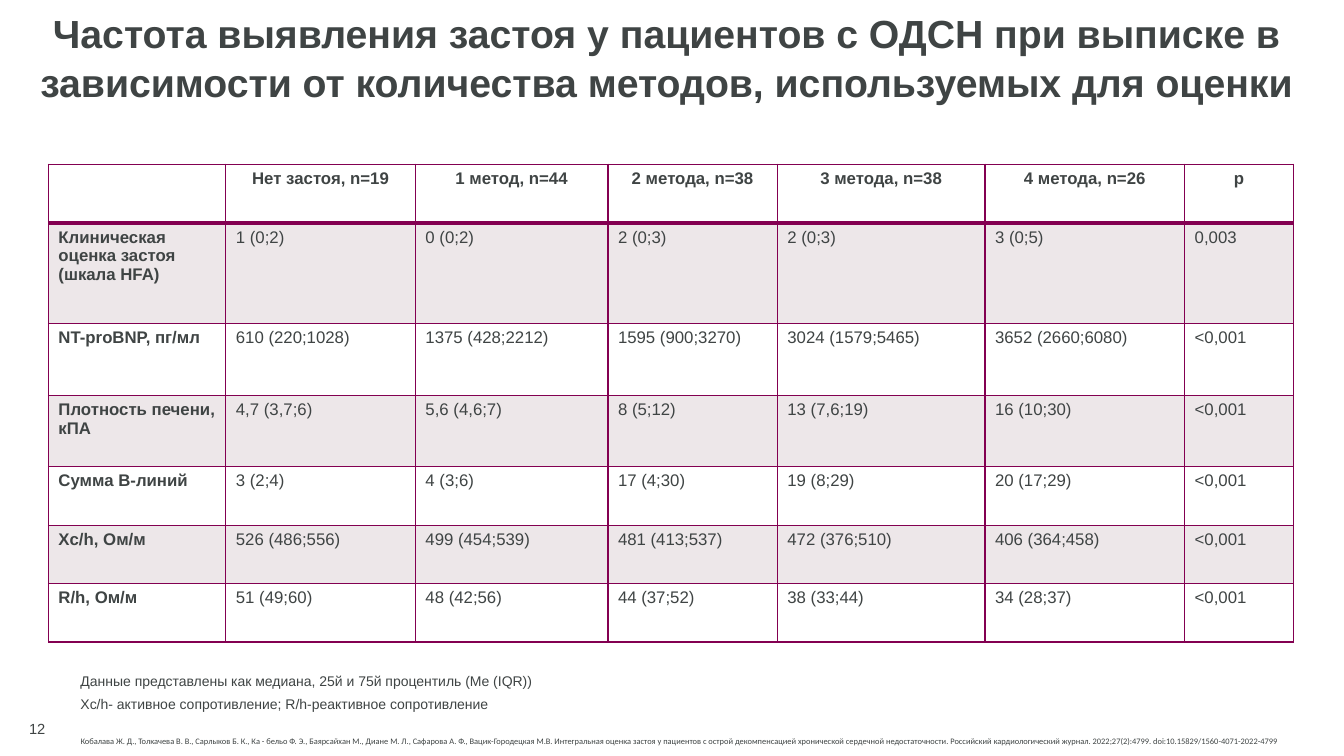
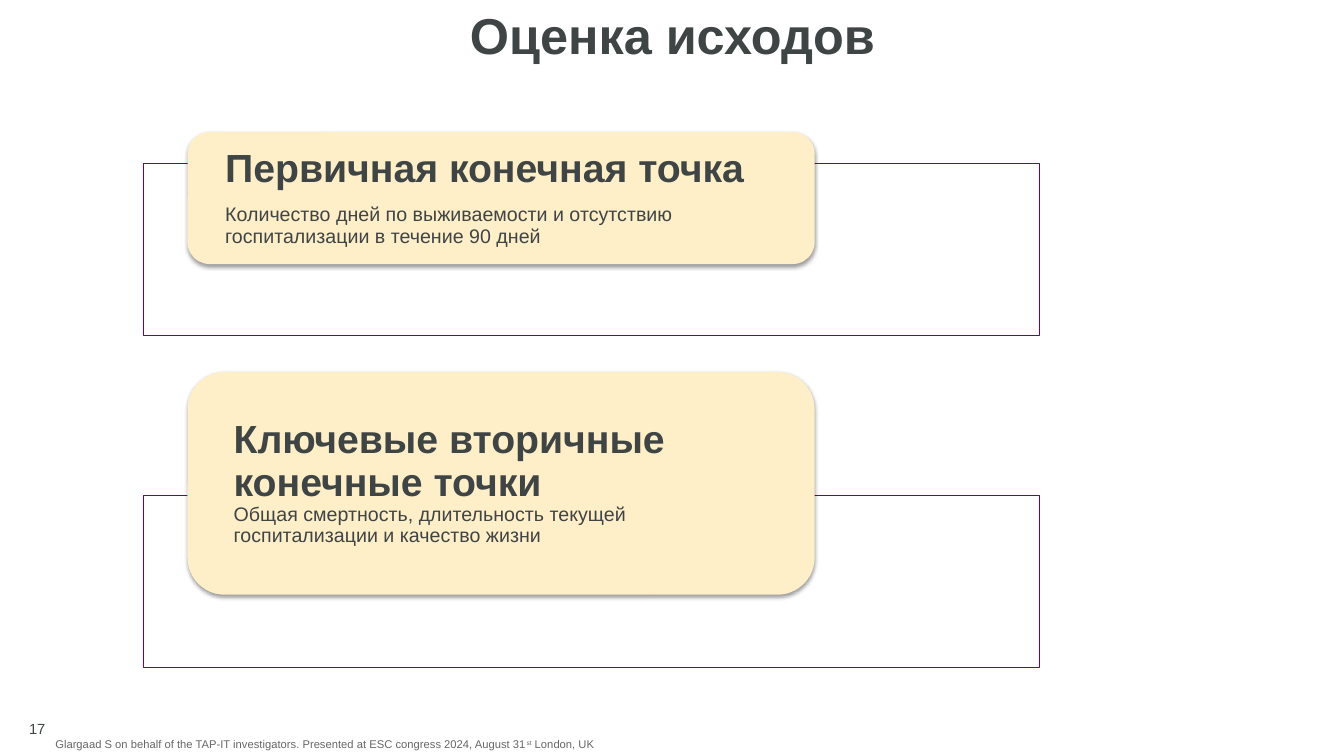
from lxml.etree import SubElement as Sub
from pptx import Presentation
from pptx.dml.color import RGBColor as Rgb
from pptx.enum.shapes import MSO_SHAPE as Kind
from pptx.enum.text import MSO_ANCHOR as Anchor, MSO_AUTO_SIZE as Auto, PP_ALIGN as Align
from pptx.oxml.ns import qn
from pptx.util import Pt

PX = 9144
HUES = {"ink": "3F4444", "grey": "666666", "plum": "830051",
        "band": "EDE7E9", "white": "FFFFFF", "cream": "FFEFC9", "black": "000000"}


def rgb(hue):
    return Rgb.from_string(HUES[hue])


def node(tag, top, **attrs):
    return Sub(top, qn(tag), attrs)


class Deck:
    def __init__(self):
        self.show = Presentation()
        self.show.slide_width, self.show.slide_height = 1333 * PX, 750 * PX
        self.slide = None

    def start(self, title, number, box, size, gap=1.0):
        self.slide = self.show.slides.add_slide(self.show.slide_layouts[5])
        head = self.slide.shapes.title
        head.left, head.top, head.width, head.height = [n * PX for n in box]
        frame = self.setup(head, Anchor.TOP)
        para = self.style(frame.paragraphs[0], title, size, bold=True)
        para.alignment, para.line_spacing = Align.CENTER, gap
        mark = self.text((0, 706, 45, 34), [number], 10.5, Anchor.BOTTOM, (0, 0, 0, 8))
        mark.paragraphs[0].alignment = Align.RIGHT

    def setup(self, shape, anchor, pads=(0, 0, 0, 0)):
        frame = shape.text_frame
        frame.word_wrap, frame.auto_size = True, Auto.NONE
        frame.vertical_anchor = anchor
        (frame.margin_left, frame.margin_top,
         frame.margin_right, frame.margin_bottom) = [n * PX for n in pads]
        return frame

    def style(self, para, text, size, hue="ink", bold=False, face="Arial"):
        para.text = text
        font = para.font
        font.name, font.size, font.bold = face, Pt(size), bold
        font.color.rgb = rgb(hue)
        return para

    def text(self, box, lines, size, anchor=Anchor.TOP, pads=(10, 5, 10, 5),
             hue="ink", face="Arial", gap=None, after=0):
        shape = self.slide.shapes.add_textbox(*[n * PX for n in box])
        frame = self.setup(shape, anchor, pads)
        for i, line in enumerate(lines):
            para = frame.add_paragraph() if i else frame.paragraphs[0]
            self.style(para, line, size, hue, face=face)
            para.line_spacing, para.space_after = gap, Pt(after)
        return frame

    def source(self, box, text, size, hue="ink", face="Arial"):
        frame = self.text(box, [text], size, Anchor.BOTTOM, hue=hue, face=face)
        return frame.paragraphs[0]

    def block(self, kind, box, hue):
        shape = self.slide.shapes.add_shape(kind, *[n * PX for n in box])
        shape.shadow.inherit = False
        shape.fill.solid()
        shape.fill.fore_color.rgb = rgb(hue)
        return shape

    def frame(self, box):
        shape = self.block(Kind.RECTANGLE, box, "white")
        shape.line.color.rgb = rgb("plum")
        shape.line.width = Pt(0.5)

    def card(self, box, head, body, pad, after=0):
        shape = self.block(Kind.ROUNDED_RECTANGLE, box, "cream")
        shape.line.fill.background()
        shade = node("a:outerShdw", shape._element.spPr.find(qn("a:effectLst")),
                     blurRad=str(Pt(3.1)), dist=str(Pt(1.6)), dir="5400000", rotWithShape="0")
        tint = node("a:srgbClr", shade, val=HUES["black"])
        node("a:alpha", tint, val="38000")
        frame = self.setup(shape, Anchor.MIDDLE, (pad, 0, 30, 0))
        top = self.style(frame.paragraphs[0], head, 28, bold=True)
        low = self.style(frame.add_paragraph(), body, 14)
        top.space_after = Pt(after)
        for para in (top, low):
            para.alignment, para.line_spacing = Align.LEFT, 0.9

    def edges(self, cell, row):
        props = cell._tc.get_or_add_tcPr()
        thick = {"T": row == 1, "B": row == 0}
        for i, side in enumerate("LRTB"):
            line = node(f"a:ln{side}", props, w=str(Pt(3 if thick.get(side) else 1)))
            node("a:srgbClr", node("a:solidFill", line), val=HUES["plum"])
            props.insert(i, line)

    def table(self, box, rows, wides, highs):
        table = self.slide.shapes.add_table(len(rows), len(wides), *[n * PX for n in box]).table
        table.first_row = table.horz_banding = False
        for col, wide in zip(table.columns, wides):
            col.width = wide * PX
        for r, (row, high) in enumerate(zip(rows, highs)):
            table.rows[r].height = high * PX
            for c, text in enumerate(row):
                cell = table.cell(r, c)
                cell.fill.solid()
                cell.fill.fore_color.rgb = rgb("band" if r % 2 else "white")
                para = self.style(cell.text_frame.paragraphs[0], text, 12, bold=r == 0 or c == 0)
                para.alignment = Align.LEFT if r else Align.CENTER
                self.edges(cell, r)


ROWS = [
    ["", "Нет застоя, n=19", "1 метод, n=44", "2 метода, n=38", "3 метода, n=38", "4 метода, n=26", "p"],
    ["Клиническая оценка застоя (шкала HFA)", "1 (0;2)", "0 (0;2)", "2 (0;3)", "2 (0;3)", "3 (0;5)", "0,003"],
    ["NT-proBNP, пг/мл", "610 (220;1028)", "1375 (428;2212)", "1595 (900;3270)",
     "3024 (1579;5465)", "3652 (2660;6080)", "<0,001"],
    ["Плотность печени, кПА", "4,7 (3,7;6)", "5,6 (4,6;7)", "8 (5;12)", "13 (7,6;19)", "16 (10;30)", "<0,001"],
    ["Сумма В-линий", "3 (2;4)", "4 (3;6)", "17 (4;30)", "19 (8;29)", "20 (17;29)", "<0,001"],
    ["Xc/h, Ом/м", "526 (486;556)", "499 (454;539)", "481 (413;537)",
     "472 (376;510)", "406 (364;458)", "<0,001"],
    ["R/h, Ом/м", "51 (49;60)", "48 (42;56)", "44 (37;52)", "38 (33;44)", "34 (28;37)", "<0,001"],
]


def methods(deck):
    deck.start("Частота выявления застоя у пациентов c ОДСН при выписке в зависимости "
               "от количества методов, используемых для оценки",
               "12", (39, 8, 1244, 183), 28, 1.03)
    deck.source((70, 716, 1235, 29),
                "Кобалава Ж. Д., Толкачева В. В., Сарлыков Б. К., Ка - бельо Ф. Э., Баярсайхан М., "
                "Диане М. Л., Сафарова А. Ф., Вацик-Городецкая М.В. Интегральная оценка застоя у пациентов "
                "с острой декомпенсацией хронической сердечной недостаточности. Российский кардиологический "
                "журнал. 2022;27(2):4799. doi:10.15829/1560-4071-2022-4799", 6, face="Calibri")
    deck.table((48, 163, 1235, 474), ROWS,
               (176, 188, 191, 168, 206, 198, 108), (58, 100, 71, 71, 58, 58, 58))
    deck.text((70, 664, 946, 49),
              ["Данные представлены как медиана, 25й и 75й процентиль (Me (IQR))",
               "Xc/h- активное сопротивление; R/h-реактивное сопротивление"], 10, gap=0.9, after=6)


def results(deck):
    deck.start("Оценка исходов", "17", (45, 4, 1244, 110), 36)
    para = deck.source((45, 678, 1235, 72),
                       "Glargaad S on behalf of the TAP-IT investigators. "
                       "Presented at ESC congress 2024, August 31", 8, "grey")
    for text, base in (("st", "30000"), (" London, UK", "0")):
        run = para.add_run()
        run.text = text
        run._r.get_or_add_rPr().set("baseline", base)
    for top in (162, 491):
        deck.frame((142, top, 889, 171))
    deck.card((186, 131, 622, 131), "Первичная конечная точка",
              "Количество дней по выживаемости и отсутствию госпитализации в течение 90 дней", 31, 9.8)
    deck.card((186, 369, 622, 221), "Ключевые вторичные конечные точки",
              "Общая смертность, длительность текущей госпитализации и качество жизни", 35)


def main():
    deck = Deck()
    methods(deck)
    results(deck)
    deck.show.save("out.pptx")


if __name__ == "__main__":
    main()
